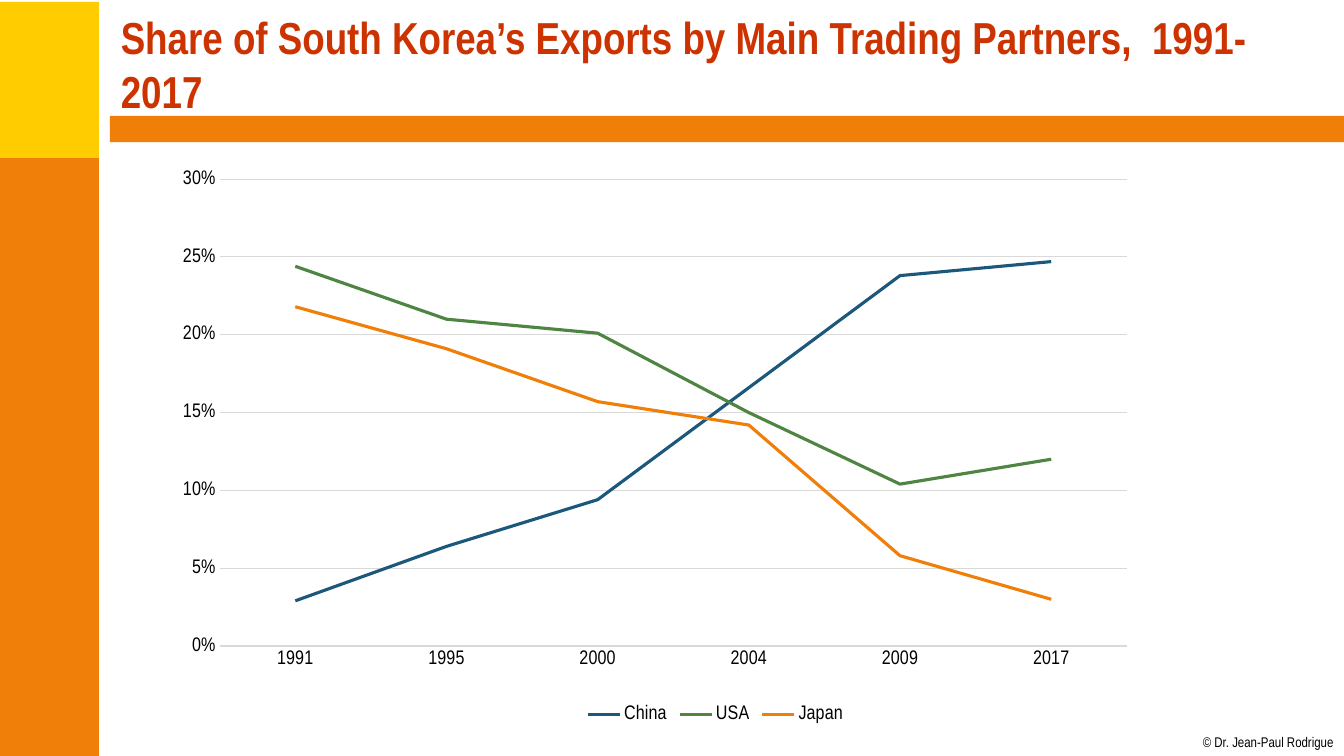
from dataclasses import dataclass

from lxml.etree import SubElement
from pptx import Presentation
from pptx.chart.chart import Chart
from pptx.chart.data import CategoryChartData
from pptx.dml.color import RGBColor
from pptx.enum.chart import XL_CHART_TYPE, XL_LEGEND_POSITION, XL_TICK_MARK
from pptx.enum.shapes import MSO_SHAPE
from pptx.enum.text import MSO_ANCHOR, MSO_AUTO_SIZE
from pptx.oxml.ns import qn
from pptx.slide import Slide
from pptx.util import Emu, Inches, Pt

WIDTH, HEIGHT = Inches(13.33), Inches(7.5)
COLUMNS = ROWS = 100
FONT = "Arial Narrow"
COLORS = {
    "yellow": "FFCC00",
    "orange": "F07F09",
    "red": "CC3300",
    "blue": "1B587C",
    "green": "4E8542",
    "grid": "D9D9D9",
    "black": "000000",
}


@dataclass(frozen=True)
class Area:
    """A rectangle in columns and rows of the slide grid."""

    col: float
    row: float
    cols: float
    rows: float

    def box(self) -> tuple[Emu, Emu, Emu, Emu]:
        """Return left, top, width and height."""
        return (
            Emu(round(WIDTH * self.col / COLUMNS)),
            Emu(round(HEIGHT * self.row / ROWS)),
            Emu(round(WIDTH * self.cols / COLUMNS)),
            Emu(round(HEIGHT * self.rows / ROWS)),
        )


@dataclass(frozen=True)
class Bar:
    """A plain coloured bar."""

    area: Area
    color: str


@dataclass(frozen=True)
class Partner:
    """A trading partner's share of exports in each year."""

    name: str
    shares: tuple[float, ...]
    color: str


BARS = (
    Bar(Area(0, 0.27, 7.35, 21.07), "yellow"),
    Bar(Area(0, 20.93, 7.35, 79.07), "orange"),
    Bar(Area(8.18, 15.33, 91.82, 3.47), "orange"),
)
TITLE = Area(8.25, 1.47, 90, 13.87)
CHART = Area(8.25, 19.07, 90, 77.2)
CREDIT = Area(89.5, 97.07, 9.83, 2.27)
PLOT = {"x": 0.09, "y": 0.06, "w": 0.75, "h": 0.8}
YEARS = ("1991", "1995", "2000", "2004", "2009", "2017")
PARTNERS = (
    Partner("China", (0.029, 0.064, 0.094, 0.166, 0.238, 0.247), "blue"),
    Partner("USA", (0.244, 0.21, 0.201, 0.15, 0.104, 0.12), "green"),
    Partner("Japan", (0.218, 0.191, 0.157, 0.142, 0.058, 0.03), "orange"),
)


def rgb(name: str) -> RGBColor:
    """Return a named colour."""
    return RGBColor.from_string(COLORS[name])


def set_font(font, size: float, color: str = "black", bold: bool = False) -> None:
    """Format a font of the slide or of its chart."""
    font.name, font.size, font.bold = FONT, Pt(size), bold
    font.color.rgb = rgb(color)


def set_line(line, color: str, width: float) -> None:
    """Give a line its colour and width."""
    line.color.rgb = rgb(color)
    line.width = Pt(width)


def add_text(s: Slide, text: str, area: Area, *, size: float, color: str = "black",
             bold: bool = False, wrap: bool = True, inset: bool = True,
             anchor: MSO_ANCHOR = MSO_ANCHOR.TOP,
             fit: MSO_AUTO_SIZE = MSO_AUTO_SIZE.NONE) -> None:
    """Add a text box with one formatted paragraph."""
    tf = s.shapes.add_textbox(*area.box()).text_frame
    tf.word_wrap, tf.auto_size, tf.vertical_anchor = wrap, fit, anchor
    if not inset:
        tf.margin_left = tf.margin_right = tf.margin_top = tf.margin_bottom = 0
    r = tf.paragraphs[0].add_run()
    r.text = text
    set_font(r.font, size, color, bold)


def add_bar(s: Slide, bar: Bar) -> None:
    """Draw a bar without outline or shadow."""
    sp = s.shapes.add_shape(MSO_SHAPE.RECTANGLE, *bar.area.box())
    sp.shadow.inherit = False
    sp.fill.solid()
    sp.fill.fore_color.rgb = rgb(bar.color)
    sp.line.fill.background()


def place_plot(chart: Chart) -> None:
    """Fix the inner plot area as shares of the chart."""
    area = chart.plots[0]._element.getparent()
    layout = area.find(qn("c:layout"))
    if layout is None:
        layout = SubElement(area, qn("c:layout"))
        area.insert(0, layout)
    manual = SubElement(layout, qn("c:manualLayout"))
    settings = {"layoutTarget": "inner", "xMode": "edge", "yMode": "edge", **PLOT}
    for tag, value in settings.items():
        SubElement(manual, qn(f"c:{tag}")).set("val", str(value))


def add_export_chart(s: Slide) -> None:
    """Add the line chart of export shares."""
    data = CategoryChartData(number_format="0%")
    data.categories = YEARS
    for partner in PARTNERS:
        data.add_series(partner.name, partner.shares)
    chart = s.shapes.add_chart(XL_CHART_TYPE.LINE, *CHART.box(), data).chart
    chart.has_title = False
    set_font(chart.font, 14)
    place_plot(chart)

    chart.has_legend = True
    chart.legend.position = XL_LEGEND_POSITION.BOTTOM
    chart.legend.include_in_layout = False
    set_font(chart.legend.font, 14)

    years, shares = chart.category_axis, chart.value_axis
    for axis in (years, shares):
        axis.major_tick_mark = axis.minor_tick_mark = XL_TICK_MARK.NONE
        set_font(axis.tick_labels.font, 14)
    set_line(years.format.line, "grid", 0.75)
    shares.format.line.fill.background()
    set_line(shares.major_gridlines.format.line, "grid", 0.75)
    shares.minimum_scale, shares.maximum_scale, shares.major_unit = 0, 0.3, 0.05
    shares.tick_labels.number_format = "0%"
    shares.tick_labels.number_format_is_linked = False

    plot = chart.plots[0]
    plot.vary_by_categories = False
    for series, partner in zip(plot.series, PARTNERS):
        series.smooth = False
        set_line(series.format.line, partner.color, 2.25)


def main() -> None:
    """Build and save the slide."""
    prs = Presentation()
    prs.slide_width, prs.slide_height = WIDTH, HEIGHT
    s = prs.slides.add_slide(prs.slide_layouts[6])
    for bar in BARS:
        add_bar(s, bar)
    add_text(s, "© Dr. Jean-Paul Rodrigue", CREDIT, size=10, wrap=False,
             inset=False, fit=MSO_AUTO_SIZE.SHAPE_TO_FIT_TEXT)
    add_text(s, "Share of South Korea’s Exports by Main Trading Partners,  1991-2017",
             TITLE, size=32, color="red", bold=True, anchor=MSO_ANCHOR.MIDDLE)
    add_export_chart(s)
    prs.save("out.pptx")


if __name__ == "__main__":
    main()
